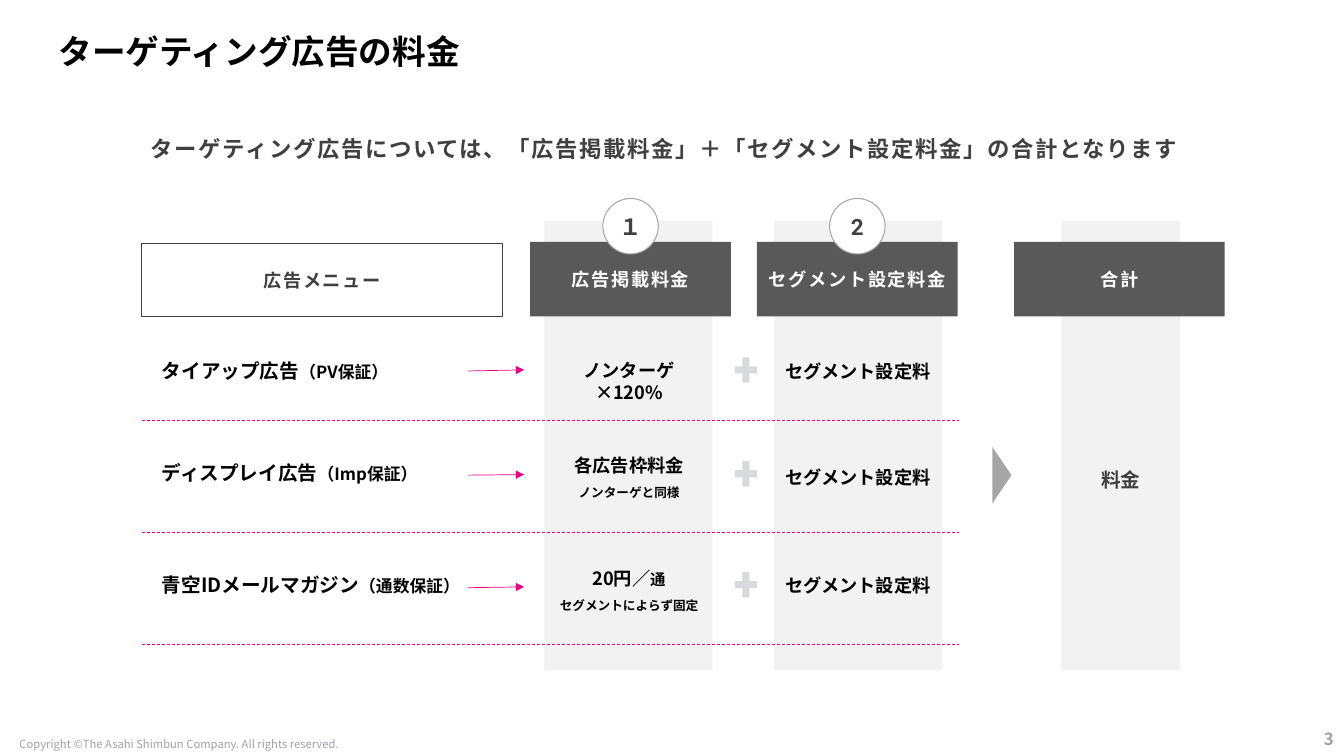
"""Build the slide on how targeting advertisement fees are added up."""
import dataclasses

import pptx
import pptx.dml.color
import pptx.enum.dml
import pptx.enum.shapes
import pptx.enum.text
import pptx.oxml.ns
import pptx.util
from lxml import etree

Pt = pptx.util.Pt
Kind = pptx.enum.shapes.MSO_SHAPE
Align = pptx.enum.text.PP_ALIGN
Anchor = pptx.enum.text.MSO_ANCHOR
color = pptx.dml.color.RGBColor.from_string
qn = pptx.oxml.ns.qn


@dataclasses.dataclass(frozen=True)
class Theme:
    font: str = "Noto Sans CJK JP"
    digit_font: str = "Roboto"
    black: str = "000000"
    white: str = "FFFFFF"
    dark: str = "404040"
    header: str = "595959"
    column: str = "F2F2F2"
    plus: str = "D8D9DC"
    gray: str = "A6A6A6"
    footer: str = "9FA1A8"
    accent: str = "EB0083"
    title: int = 24
    lead: int = 16
    menu: int = 14
    body: int = 13
    detail: int = 12
    unit: int = 11
    note: int = 9
    small: int = 8


theme = Theme()


def write_text(box, text, size=theme.body, fill=theme.black, font=theme.font, bold=True,
               align=Align.CENTER, anchor=Anchor.MIDDLE, insets=(7.2, 3.6, 7.2, 3.6),
               wrap=True, line_height=None, tracking=0):
    """Write a string, or paragraphs made of (text, size) spans, into a shape."""
    frame = box.text_frame
    frame.word_wrap = wrap
    frame.vertical_anchor = anchor
    frame.margin_left, frame.margin_top, frame.margin_right, frame.margin_bottom = map(Pt, insets)
    paragraphs = [[(text, size)]] if isinstance(text, str) else text
    for index, spans in enumerate(paragraphs):
        para = frame.add_paragraph() if index else frame.paragraphs[0]
        para.alignment = align
        if line_height:
            para.line_spacing = Pt(line_height)
        for words, span_size in spans:
            span = para.add_run()
            span.text = words
            span.font.size = Pt(span_size)
            span.font.bold = bold
            span.font.name = font
            span.font.color.rgb = color(fill)
            properties = span.font._element
            east_asian = etree.Element(qn("a:ea"), typeface=font)
            properties.find(qn("a:latin")).addnext(east_asian)
            if tracking:
                properties.set("spc", str(tracking))


def add_block(kind, left, top, width, height, fill, line=None):
    """Add a flat shape with an optional thin outline."""
    block = page.shapes.add_shape(kind, Pt(left), Pt(top), Pt(width), Pt(height))
    block.shadow.inherit = False
    block.fill.solid()
    block.fill.fore_color.rgb = color(fill)
    if line:
        block.line.color.rgb = color(line)
        block.line.width = Pt(0.75)
    else:
        block.line.fill.background()
    return block


deck = pptx.Presentation()
deck.slide_width, deck.slide_height = Pt(960), Pt(540)
page = deck.slides.add_slide(deck.slide_layouts[6])

captions = [
    ((41.8, 23.8, 774.7, 25.9), "ターゲティング広告の料金",
     dict(size=theme.title, align=Align.LEFT, insets=(0, 0, 0, 0))),
    ((80.6, 80.6, 782.6, 51.1),
     "ターゲティング広告については、「広告掲載料金」＋「セグメント設定料金」の合計となります",
     dict(size=theme.lead, fill=theme.dark, tracking=120, insets=(8.6, 2.9, 2.9, 2.9))),
    ((6.5, 525.6, 243.4, 12.2), "Copyright ©The Asahi Shimbun Company. All rights reserved.",
     dict(size=theme.small, fill=theme.footer, bold=False, wrap=False)),
    ((903.6, 516.2, 56.2, 23.8), "3",
     dict(size=theme.detail, fill=theme.footer, align=Align.RIGHT)),
]
for place, text, style in captions:
    write_text(page.shapes.add_textbox(*map(Pt, place)), text, **style)

for left, width in [(388.8, 120.2), (553, 120.2), (758.2, 85)]:
    column = add_block(Kind.RECTANGLE, left, 157.7, width, 321.1, theme.column)
write_text(column, "料金", size=theme.menu, fill=theme.dark, insets=(7.2, 53, 7.2, 3.6))

headers = [
    (100.8, 174.2, 258.5, 51.8, "広告メニュー", theme.white, theme.dark, theme.dark),
    (378.7, 172.8, 143.3, 53.3, "広告掲載料金", theme.header, None, theme.white),
    (540.7, 172.8, 143.3, 53.3, "セグメント設定料金", theme.header, None, theme.white),
    (724.3, 172.8, 150.5, 53.3, "合計", theme.header, None, theme.white),
]
for left, top, width, height, text, fill, line, ink in headers:
    header = add_block(Kind.RECTANGLE, left, top, width, height, fill, line)
    write_text(header, text, fill=ink, tracking=120, insets=(0, 0, 0, 0))

for left, number in [(430.6, "１"), (592.6, "2")]:
    badge = add_block(Kind.OVAL, left, 141.8, 39.6, 39.6, theme.white, theme.gray)
    write_text(badge, number, size=theme.lead, fill=theme.dark, font=theme.digit_font,
               insets=(0, 0, 0, 0))

rows = [
    dict(menu=("タイアップ広告", "（PV保証）"), menu_top=236.9, arrow=(265, 264.2),
         fee=[[("ノンターゲ", theme.body)], [("×120%", theme.body)]],
         fee_top=252.7, fee_line=16, plus_top=252, segment_top=252),
    dict(menu=("ディスプレイ広告", "（Imp保証）"), menu_top=309.6, arrow=(339.4, 339),
         fee=[[("各広告枠料金", theme.body)], [("ノンターゲと同様", theme.note)]],
         fee_top=319.7, fee_line=17, plus_top=326.2, segment_top=328.3),
    dict(menu=("青空IDメールマガジン", "（通数保証）"), menu_top=390.2, arrow=(419.8, 419.2),
         fee=[[("20円／", theme.body), ("通", theme.unit)],
              [("セグメントによらず固定", theme.note)]],
         fee_top=400.3, fee_line=17, plus_top=405.4, segment_top=405.4),
]
for index, row in enumerate(rows):
    menu = page.shapes.add_textbox(Pt(108.5), Pt(row["menu_top"]), Pt(248.6), Pt(55.4))
    write_text(menu, [list(zip(row["menu"], (theme.menu, theme.detail)))], align=Align.LEFT)

    fee = page.shapes.add_textbox(Pt(389.3), Pt(row["fee_top"]), Pt(120), Pt(39.6))
    write_text(fee, row["fee"], anchor=Anchor.TOP, wrap=False, line_height=row["fee_line"])

    plus = add_block(Kind.MATH_PLUS, 522, row["plus_top"], 21.6, 24.5, theme.plus)
    plus.adjustments[0] = 0.235

    segment = page.shapes.add_textbox(Pt(545), Pt(row["segment_top"]), Pt(135.4), Pt(25.2))
    write_text(segment, "セグメント設定料", anchor=Anchor.TOP, insets=(9.4, 5, 9.4, 5))

    divider = 300.2 + 80 * index
    for start, end, is_arrow in [((101.5, divider), (684.7, divider), False),
                                 ((334.4, row["arrow"][0]), (374.4, row["arrow"][1]), True)]:
        rule = page.shapes.add_connector(
            pptx.enum.shapes.MSO_CONNECTOR.STRAIGHT, *map(Pt, start + end))
        rule.line.color.rgb = color(theme.accent)
        rule.line.width = Pt(0.5)
        if is_arrow:
            etree.SubElement(rule.line._get_or_add_ln(), qn("a:tailEnd"), type="triangle")
        else:
            rule.line.dash_style = pptx.enum.dml.MSO_LINE.DASH
        etree.SubElement(rule._element.spPr, qn("a:effectLst"))

total_pointer = add_block(Kind.ISOSCELES_TRIANGLE, 695.5, 332.6, 40.3, 13.7, theme.gray)
total_pointer.rotation = 90

deck.save("out.pptx")
